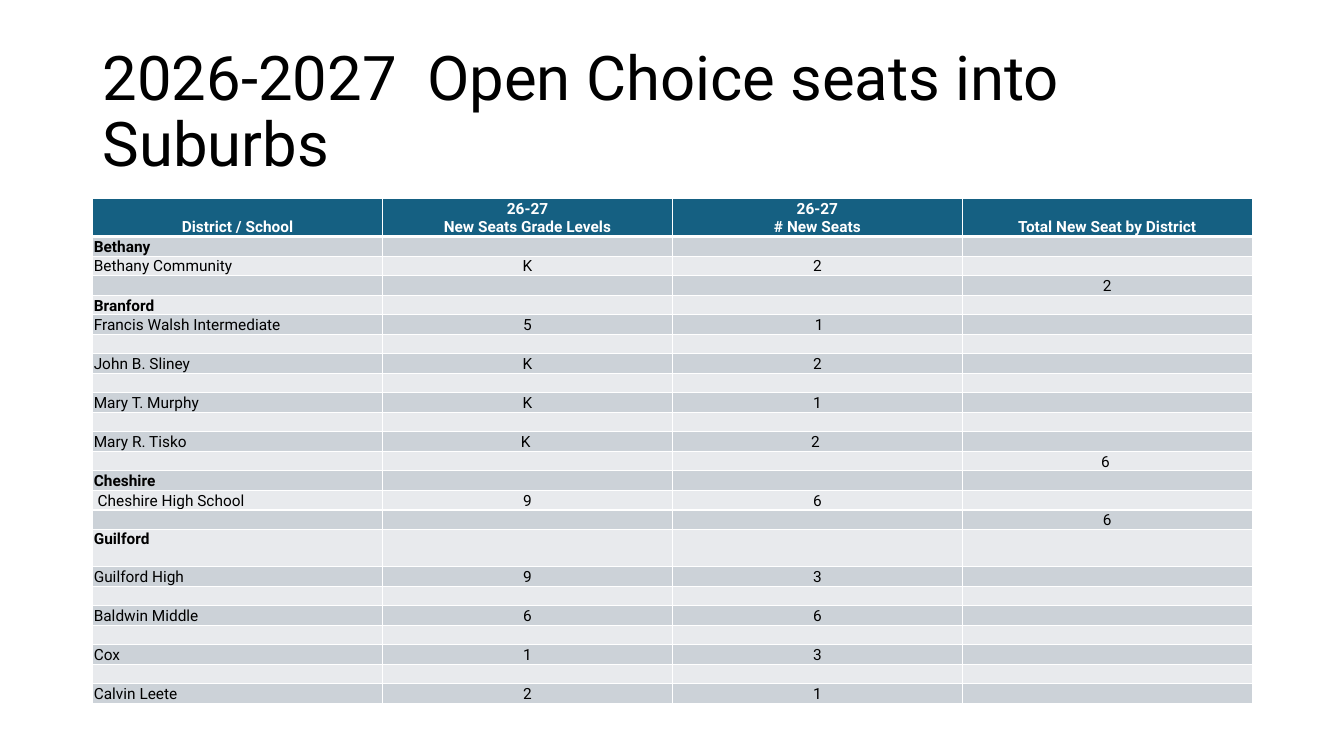
from dataclasses import dataclass

from lxml import etree
from pptx import Presentation
from pptx.dml.color import RGBColor
from pptx.enum.text import MSO_ANCHOR, PP_ALIGN
from pptx.oxml.ns import qn
from pptx.util import Inches, Pt

LEFT, CENTER = PP_ALIGN.LEFT, PP_ALIGN.CENTER
TOP, MIDDLE, BOTTOM = MSO_ANCHOR.TOP, MSO_ANCHOR.MIDDLE, MSO_ANCHOR.BOTTOM


@dataclass(frozen=True)
class Theme:
    font: str = "Roboto"
    title_size: int = 44
    table_size: int = 11
    ink: str = "000000"
    paper: str = "FFFFFF"
    header: str = "156082"
    dark_band: str = "CCD2D8"
    light_band: str = "E8EAED"
    rule: int = 1
    header_rule: int = 3


theme = Theme()


def write_text(frame, text, size=theme.table_size, color=theme.ink, bold=False,
               align=LEFT, anchor=BOTTOM, line_spacing=None):
    frame.vertical_anchor = anchor
    for number, line in enumerate(text.split("\n")):
        para = frame.add_paragraph() if number else frame.paragraphs[0]
        para.alignment = align
        if line_spacing:
            para.line_spacing = line_spacing
        if not line:
            # An empty cell needs a small type size to keep its row low
            etree.SubElement(para._p, qn("a:endParaRPr"), sz=str(size * 100))
            continue
        span = para.add_run()
        span.text = line
        span.font.name = theme.font
        span.font.size = Pt(size)
        span.font.bold = bold
        span.font.color.rgb = RGBColor.from_string(color)


def format_cell(cell, fill, top_rule, bottom_rule):
    cell.margin_left = cell.margin_right = cell.margin_top = Inches(0.01)
    cell.margin_bottom = 0
    properties = cell._tc.get_or_add_tcPr()
    sides = {"L": theme.rule, "R": theme.rule, "T": top_rule, "B": bottom_rule}
    for side, width in sides.items():
        line = etree.SubElement(properties, qn(f"a:ln{side}"), w=str(Pt(width)))
        paint = etree.SubElement(line, qn("a:solidFill"))
        etree.SubElement(paint, qn("a:srgbClr"), val=theme.paper)
    cell.fill.solid()
    cell.fill.fore_color.rgb = RGBColor.from_string(fill)


deck = Presentation()
deck.slide_width, deck.slide_height = Inches(13.33), Inches(7.5)
page = deck.slides.add_slide(deck.slide_layouts[6])

# Title
box = page.shapes.add_textbox(Inches(0.92), Inches(0.4), Inches(11.5), Inches(1.45))
box.text_frame.word_wrap = True
write_text(box.text_frame, "2026-2027  Open Choice seats into Suburbs",
           size=theme.title_size, anchor=MIDDLE, line_spacing=0.9)

# Seats by district: school, grade level, new seats, district total
headings = ("District / School", "26-27\nNew Seats Grade Levels",
            "26-27\n# New Seats", "Total New Seat by District")
districts = ("Bethany", "Branford", "Cheshire", "Guilford")
blank = ("", "", "", "")
rows = [
    headings,
    ("Bethany", "", "", ""),
    ("Bethany Community", "K", "2", ""),
    ("", "", "", "2"),
    ("Branford", "", "", ""),
    ("Francis Walsh Intermediate", "5", " 1", ""),
    blank,
    ("John B. Sliney", "K", "2", ""),
    blank,
    ("Mary T. Murphy", "K", "1", ""),
    blank,
    ("Mary R. Tisko ", "K ", "2 ", ""),
    ("", "", "", "6 "),
    ("Cheshire", "", "", ""),
    (" Cheshire High School", "9", "6", ""),
    ("", "", "", "6"),
    ("Guilford", "", "", ""),
    ("Guilford High", "9", "3", ""),
    blank,
    ("Baldwin Middle", "6", "6", ""),
    blank,
    ("Cox", "1", "3", ""),
    blank,
    ("Calvin Leete", "2", "1", ""),
]

# Table grid: the header and the Guilford row are two lines high
table_height, tall_row = Inches(4.95), Inches(0.37)
tall_rows = (0, rows.index(("Guilford", "", "", "")))
low_row = (table_height - len(tall_rows) * tall_row) // (len(rows) - len(tall_rows))
table = page.shapes.add_table(len(rows), len(headings), Inches(0.92), Inches(1.97),
                              Inches(11.5), table_height).table

# Table cells
for row_number, texts in enumerate(rows):
    is_header = row_number == 0
    is_tall = row_number in tall_rows
    table.rows[row_number].height = tall_row if is_tall else low_row
    band = theme.dark_band if row_number % 2 else theme.light_band
    for column, text in enumerate(texts):
        cell = table.cell(row_number, column)
        format_cell(cell, theme.header if is_header else band,
                    top_rule=theme.header_rule if row_number == 1 else theme.rule,
                    bottom_rule=theme.header_rule if is_header else theme.rule)
        write_text(cell.text_frame, text,
                   color=theme.paper if is_header else theme.ink,
                   bold=is_header or text in districts,
                   align=CENTER if is_header or column else LEFT)
        cell.vertical_anchor = TOP if is_tall and not is_header else BOTTOM

deck.save("out.pptx")
